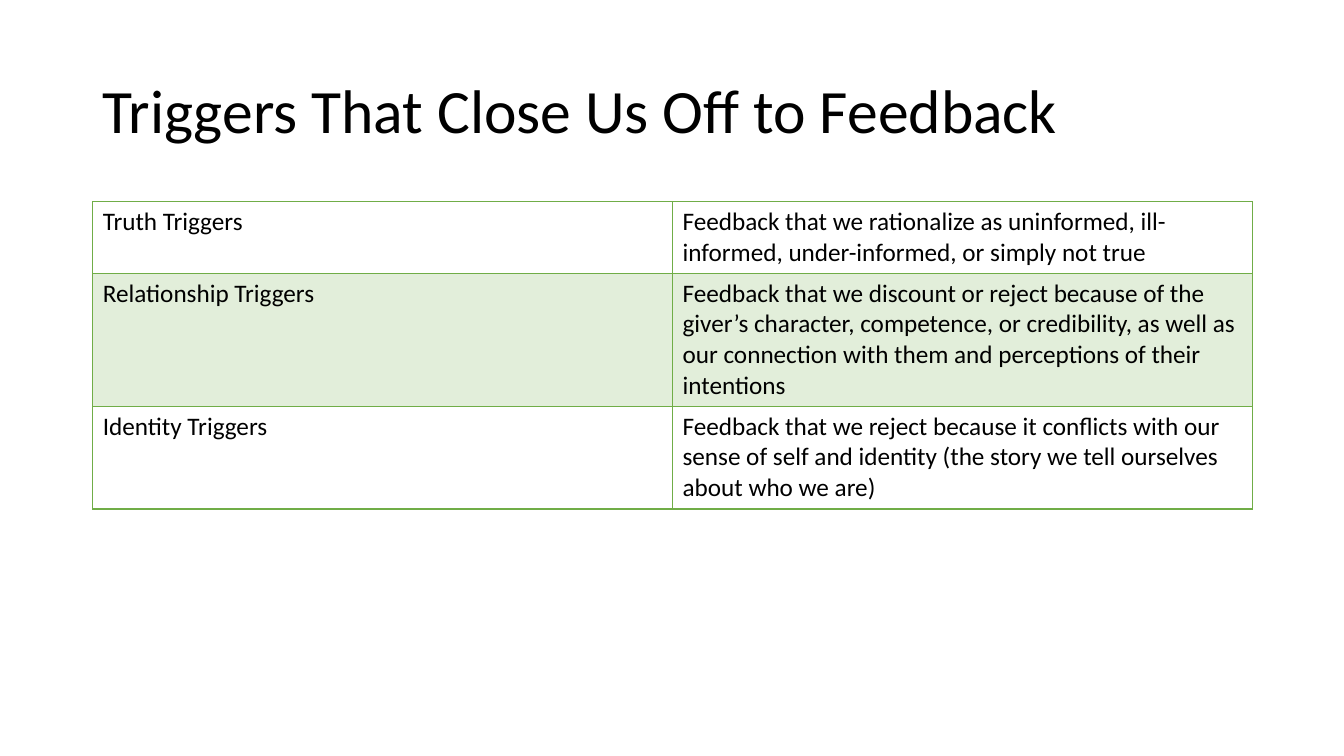
from lxml.etree import SubElement
from pptx import Presentation
from pptx.dml.color import RGBColor
from pptx.enum.text import MSO_ANCHOR
from pptx.oxml.ns import qn
from pptx.util import Inches, Pt


def color(hex_code):
    return RGBColor.from_string(hex_code)


class TriggerSlide:
    font = "Calibri"
    ink = "000000"
    green = "70AD47"
    border_width = Pt(1)

    def __init__(self, deck):
        self.slide = deck.slides.add_slide(deck.slide_layouts[6])

    def set_text(self, frame, text, size):
        frame.text = text
        for paragraph in frame.paragraphs:
            for run in paragraph.runs:
                run.font.name = self.font
                run.font.size = Pt(size)
                run.font.color.rgb = color(self.ink)

    def title(self, text, left, top, width, height):
        heading = self.slide.shapes.add_textbox(
            Inches(left), Inches(top), Inches(width), Inches(height))
        frame = heading.text_frame
        frame.word_wrap = True
        frame.vertical_anchor = MSO_ANCHOR.MIDDLE
        self.set_text(frame, text, 44)
        frame.paragraphs[0].line_spacing = 0.9

    def outline(self, cell):
        properties = cell._tc.get_or_add_tcPr()
        for side in ("a:lnL", "a:lnR", "a:lnT", "a:lnB"):
            line = SubElement(properties, qn(side), w=str(self.border_width))
            fill = SubElement(line, qn("a:solidFill"))
            SubElement(fill, qn("a:srgbClr"), val=self.green)

    def tint(self, cell, percent):
        cell.fill.solid()
        cell.fill.fore_color.rgb = color(self.green)
        shade = cell._tc.tcPr.find(qn("a:solidFill")).find(qn("a:srgbClr"))
        SubElement(shade, qn("a:alpha"), val=str(percent * 1000))

    def table(self, rows, heights, left, top, width):
        grid = self.slide.shapes.add_table(
            len(rows), len(rows[0]), Inches(left), Inches(top),
            Inches(width), Inches(sum(heights))).table
        grid.first_row = False
        grid.horz_banding = False
        for row_index, (texts, height) in enumerate(zip(rows, heights)):
            grid.rows[row_index].height = Inches(height)
            for column_index, text in enumerate(texts):
                cell = grid.cell(row_index, column_index)
                self.set_text(cell.text_frame, text, 18)
                self.outline(cell)
                if row_index % 2:
                    self.tint(cell, 20)
                else:
                    cell.fill.background()


def main():
    deck = Presentation()
    deck.slide_width = Inches(13.33)
    deck.slide_height = Inches(7.5)
    slide = TriggerSlide(deck)
    slide.title("Triggers That Close Us Off to Feedback", 0.92, 0.4, 11.5, 1.45)
    triggers = [
        ("Truth Triggers",
         "Feedback that we rationalize as uninformed, ill-informed, "
         "under-informed, or simply not true"),
        ("Relationship Triggers",
         "Feedback that we discount or reject because of the giver’s "
         "character, competence, or credibility, as well as our connection "
         "with them and perceptions of their intentions"),
        ("Identity Triggers",
         "Feedback that we reject because it conflicts with our sense of "
         "self and identity (the story we tell ourselves about who we are)"),
    ]
    slide.table(triggers, [0.71, 1.32, 1.02], 0.92, 2, 11.5)
    deck.save("out.pptx")


if __name__ == "__main__":
    main()
